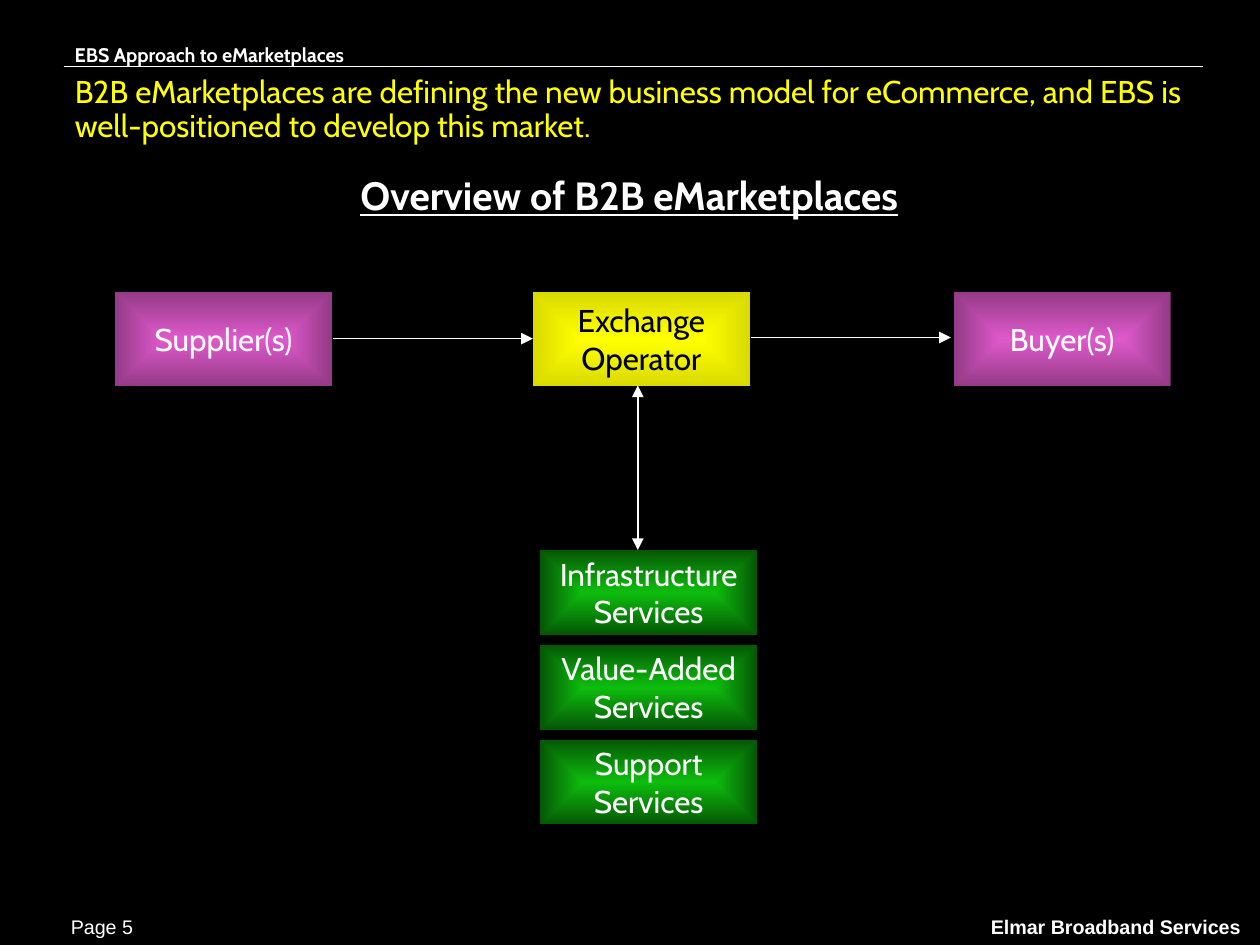
import pptx
import pptx.dml.color
import pptx.enum.shapes
import pptx.enum.text
import pptx.oxml
import pptx.oxml.ns
import pptx.util

Cm, Pt = pptx.util.Cm, pptx.util.Pt
RGB = pptx.dml.color.RGBColor.from_string
ALIGN = pptx.enum.text.PP_ALIGN
ANCHOR = pptx.enum.text.MSO_ANCHOR
qn = pptx.oxml.ns.qn
NS = pptx.oxml.ns.nsdecls("a")
COLORS = {
    "black": "000000", "white": "FFFFFF", "yellow": "FFFF00",
    "yellow_edge": "DADA00", "pink": "DF59CC", "pink_edge": "933A86",
    "green": "0DBD0D", "green_edge": "055705",
}


def put_text(sp, text, size, color="white", font="Cabin", bold=False,
             align=ALIGN.LEFT, anchor=ANCHOR.MIDDLE, inset=(0.25, 0.13)):
    tf = sp.text_frame
    tf.word_wrap = True
    tf.auto_size = pptx.enum.text.MSO_AUTO_SIZE.NONE
    tf.vertical_anchor = anchor
    tf.margin_left = tf.margin_right = Cm(inset[0])
    tf.margin_top = tf.margin_bottom = Cm(inset[1])
    p = tf.paragraphs[0]
    p.alignment = align
    r = p.add_run()
    r.text = text
    r.font.name, r.font.size, r.font.bold = font, Pt(size), bold
    r.font.color.rgb = RGB(COLORS[color])
    return p


def add_line(x1, y1, x2, y2, width=0.75, ends=()):
    cn = s.shapes.add_connector(pptx.enum.shapes.MSO_CONNECTOR.STRAIGHT,
                                Cm(x1), Cm(y1), Cm(x2), Cm(y2))
    cn.line.color.rgb = RGB(COLORS["white"])
    cn.line.width = Pt(width)
    ln = cn.line._get_or_add_ln()
    for end in ends:
        ln.append(pptx.oxml.parse_xml(f'<a:{end} {NS} type="triangle"/>'))
    ln.addnext(pptx.oxml.parse_xml(f"<a:effectLst {NS}/>"))


prs = pptx.Presentation()
prs.slide_width, prs.slide_height = Cm(22.58), Cm(16.94)
s = prs.slides.add_slide(prs.slide_layouts[1])
s.background.fill.solid()
s.background.fill.fore_color.rgb = RGB(COLORS["black"])

# Title and subtitle
title, body = s.shapes.title, s.placeholders[1]
title.left, title.top, title.width, title.height = Cm(1.14), Cm(1.27), Cm(20.37), Cm(1.7)
p = put_text(title, "B2B eMarketplaces are defining the new business model for "
             "eCommerce, and EBS is well-positioned to develop this market.",
             16, "yellow", anchor=ANCHOR.TOP, inset=(0.2, 0.1))
p.line_spacing = 0.9

body.left, body.top, body.width, body.height = Cm(1.12), Cm(2.97), Cm(20.32), Cm(1.37)
p = put_text(body, "Overview of B2B eMarketplaces", 20, bold=True,
             align=ALIGN.CENTER, anchor=ANCHOR.TOP, inset=(0.2, 0.1))
p.space_before = Pt(5)
p.runs[0].font.underline = True
pPr = p._p.get_or_add_pPr()
pPr.set("marL", "0")
pPr.set("indent", "0")
pPr.append(pptx.oxml.parse_xml(f"<a:buNone {NS}/>"))

# Header and footer
for text, x, y, w, font, bold, align in [
    ("EBS Approach to eMarketplaces", 1.09, 0.64, 8, "Cabin", True, ALIGN.LEFT),
    ("Page 5", 1.02, 16.26, 3, "Arial", False, ALIGN.LEFT),
    ("Elmar Broadband Services", 15.48, 16.26, 7, "Arial", True, ALIGN.RIGHT),
]:
    tb = s.shapes.add_textbox(Cm(x), Cm(y), Cm(w), Cm(0.69))
    put_text(tb, text, 10, font=font, bold=bold, align=align)
add_line(1.14, 1.19, 21.56, 1.19, width=0.5)

# Market participants, then the stack of services
boxes = [
    ("Supplier(s)", 2.06, 5.23, 1.7, "pink", "white"),
    ("Exchange Operator", 9.55, 5.23, 1.7, "yellow", "black"),
    ("Buyer(s)", 17.09, 5.23, 1.7, "pink", "white"),
]
for i, name in enumerate(["Infrastructure", "Value-Added", "Support"]):
    boxes.append((name + " Services", 9.68, 9.86 + 1.7 * i, 1.52, "green", "white"))

for text, x, y, h, fill, color in boxes:
    sp = s.shapes.add_shape(pptx.enum.shapes.MSO_SHAPE.RECTANGLE,
                            Cm(x), Cm(y), Cm(3.89), Cm(h))
    sp.shadow.inherit = False
    sp.line.fill.background()
    sp.fill.gradient()
    for stop, pos, key in zip(sp.fill.gradient_stops, (0, 1), (fill, fill + "_edge")):
        stop.position = pos
        stop.color.rgb = RGB(COLORS[key])
    # Turn the linear gradient into one that spreads from the centre
    lin = sp._element.spPr.find(qn("a:gradFill")).find(qn("a:lin"))
    lin.addnext(pptx.oxml.parse_xml(
        f'<a:path {NS} path="rect"><a:fillToRect l="50000" t="50000" '
        'r="50000" b="50000"/></a:path>'))
    lin.getparent().remove(lin)
    put_text(sp, text, 16, color, align=ALIGN.CENTER)

# Arrows
add_line(5.97, 6.07, 9.55, 6.07, ends=["tailEnd"])
add_line(13.46, 6.05, 17.04, 6.05, ends=["tailEnd"])
add_line(11.43, 6.91, 11.43, 9.86, ends=["headEnd", "tailEnd"])

prs.save("out.pptx")
